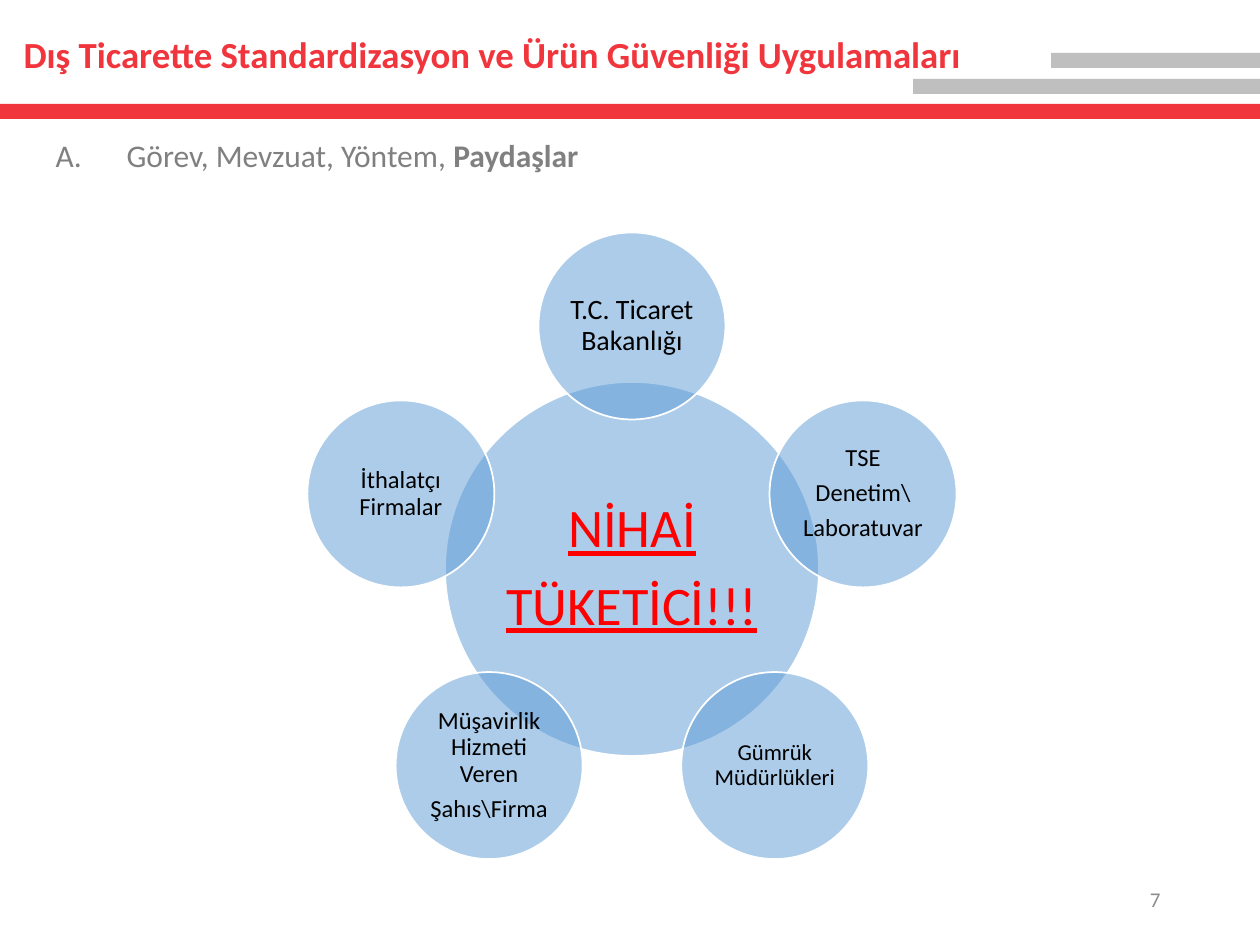
from math import cos, pi, sin

from lxml import etree
from pptx import Presentation
from pptx.dml.color import RGBColor
from pptx.enum.shapes import MSO_SHAPE
from pptx.enum.text import MSO_ANCHOR, MSO_AUTO_SIZE, PP_ALIGN
from pptx.oxml.ns import qn
from pptx.util import Pt

RECT, OVAL = MSO_SHAPE.RECTANGLE, MSO_SHAPE.OVAL
TOP, MIDDLE = MSO_ANCHOR.TOP, MSO_ANCHOR.MIDDLE
LEFT, CENTER, RIGHT = PP_ALIGN.LEFT, PP_ALIGN.CENTER, PP_ALIGN.RIGHT
FIXED = MSO_AUTO_SIZE.NONE

# Content
TITLE = "Dış Ticarette Standardizasyon ve Ürün Güvenliği Uygulamaları"
TOPIC = [("Görev, Mevzuat, Yöntem, ", False), ("Paydaşlar", True)]
NUMBER = "7"
HUB = ["NİHAİ", "TÜKETİCİ!!!"]
PARTIES = [  # clockwise from the top: type size, paragraphs
    (16, ["T.C. Ticaret Bakanlığı"]),
    (14, ["TSE", "Denetim\\", "Laboratuvar"]),
    (13, ["Gümrük Müdürlükleri"]),
    (14, ["Müşavirlik Hizmeti Veren", "Şahıs\\Firma"]),
    (14, ["İthalatçı Firmalar"]),
]


class Theme:
    font = "Calibri"
    red, gray, body, page = "F0353D", "BFBFBF", "808080", "8C8C8C"
    disc, edge, alert, ink = "5B9BD5", "FFFFFF", "FF0000", "000000"
    title_pt, body_pt, page_pt, hub_pt = 21, 18, 12, 31


# Layout in px
WIDE, HIGH = 1260, 945
SCALE = 914400 / 126
BAR = 15
BARS = [(0, 104, Theme.red), (1051, 53, Theme.gray), (913, 79, Theme.gray)]
MID_X, MID_Y = 632, 569
HUB_D, PARTY_D, ORBIT = 374, 187, 243


def px(n):
    return round(n * SCALE)


def rgb(code):
    return RGBColor.from_string(code)


def place(shape, left, top, width, height):
    shape.left, shape.top = px(left), px(top)
    shape.width, shape.height = px(width), px(height)


def style(para, size, color, align=LEFT, bold=False):
    para.alignment = align
    para.line_spacing = 0.9
    font = para.font
    font.name, font.size, font.bold = Theme.font, Pt(size), bold
    font.color.rgb = rgb(color)


def add_bar(slide, left, top, color):
    """Draw a bar that runs to the right edge of the slide."""
    bar = slide.shapes.add_shape(
        RECT, px(left), px(top), px(WIDE - left), px(BAR))
    bar.shadow.inherit = False
    bar.fill.solid()
    bar.fill.fore_color.rgb = rgb(color)
    bar.line.fill.background()


def add_disc(slide, x, y, size, lines, pt, color, inset, under=False):
    """Draw a half-clear, labelled circle centred on x, y."""
    disc = slide.shapes.add_shape(
        OVAL, px(x - size / 2), px(y - size / 2), px(size), px(size))
    disc.shadow.inherit = False
    disc.fill.solid()
    disc.fill.fore_color.rgb = rgb(Theme.disc)
    tint = disc.element.spPr.find(f"{qn('a:solidFill')}/{qn('a:srgbClr')}")
    etree.SubElement(tint, qn("a:alpha"), val="50000")
    disc.line.color.rgb = rgb(Theme.edge)
    disc.line.width = Pt(1)
    frame = disc.text_frame
    frame.word_wrap = True
    frame.vertical_anchor = MIDDLE
    frame.margin_left = frame.margin_right = px(inset)
    frame.margin_top = frame.margin_bottom = px(inset)
    frame.text = "\n".join(lines)
    for para in frame.paragraphs:
        style(para, pt, color, CENTER)
        para.space_after = Pt(round(0.35 * pt, 1))
        para.font.underline = under


def add_heads(slide):
    title, body = slide.placeholders
    place(title, 11, 20, 1052, 73)
    frame = title.text_frame
    frame.auto_size, frame.vertical_anchor = FIXED, MIDDLE
    frame.text = TITLE
    style(frame.paragraphs[0], Theme.title_pt, Theme.red, bold=True)

    place(body, 43, 134, 975, 48)
    frame = body.text_frame
    frame.auto_size, frame.vertical_anchor = FIXED, TOP
    para = frame.paragraphs[0]
    for text, bold in TOPIC:
        run = para.add_run()
        run.text, run.font.bold = text, bold
    style(para, Theme.body_pt, Theme.body)
    para.space_before = Pt(10)
    props = para._p.get_or_add_pPr()
    props.set("marL", str(px(71)))
    props.set("indent", str(-px(71)))
    mark = etree.Element(qn("a:buAutoNum"), type="alphaUcPeriod")
    props.find(qn("a:defRPr")).addprevious(mark)


def add_number(slide):
    box = slide.shapes.add_textbox(px(890), px(876), px(283), px(50))
    frame = box.text_frame
    frame.word_wrap, frame.vertical_anchor = True, MIDDLE
    frame.text = NUMBER
    style(frame.paragraphs[0], Theme.page_pt, Theme.page, RIGHT)


def main():
    deck = Presentation()
    deck.slide_width, deck.slide_height = px(WIDE), px(HIGH)
    slide = deck.slides.add_slide(deck.slide_layouts[1])
    for bar in BARS:
        add_bar(slide, *bar)
    add_heads(slide)
    add_number(slide)
    add_disc(slide, MID_X, MID_Y, HUB_D, HUB, Theme.hub_pt, Theme.alert,
             5, under=True)
    for i, (pt, lines) in enumerate(PARTIES):
        turn = 2 * pi * i / len(PARTIES)
        add_disc(slide, MID_X + ORBIT * sin(turn), MID_Y - ORBIT * cos(turn),
                 PARTY_D, lines, pt, Theme.ink, 3)
    deck.save("out.pptx")


if __name__ == "__main__":
    main()
